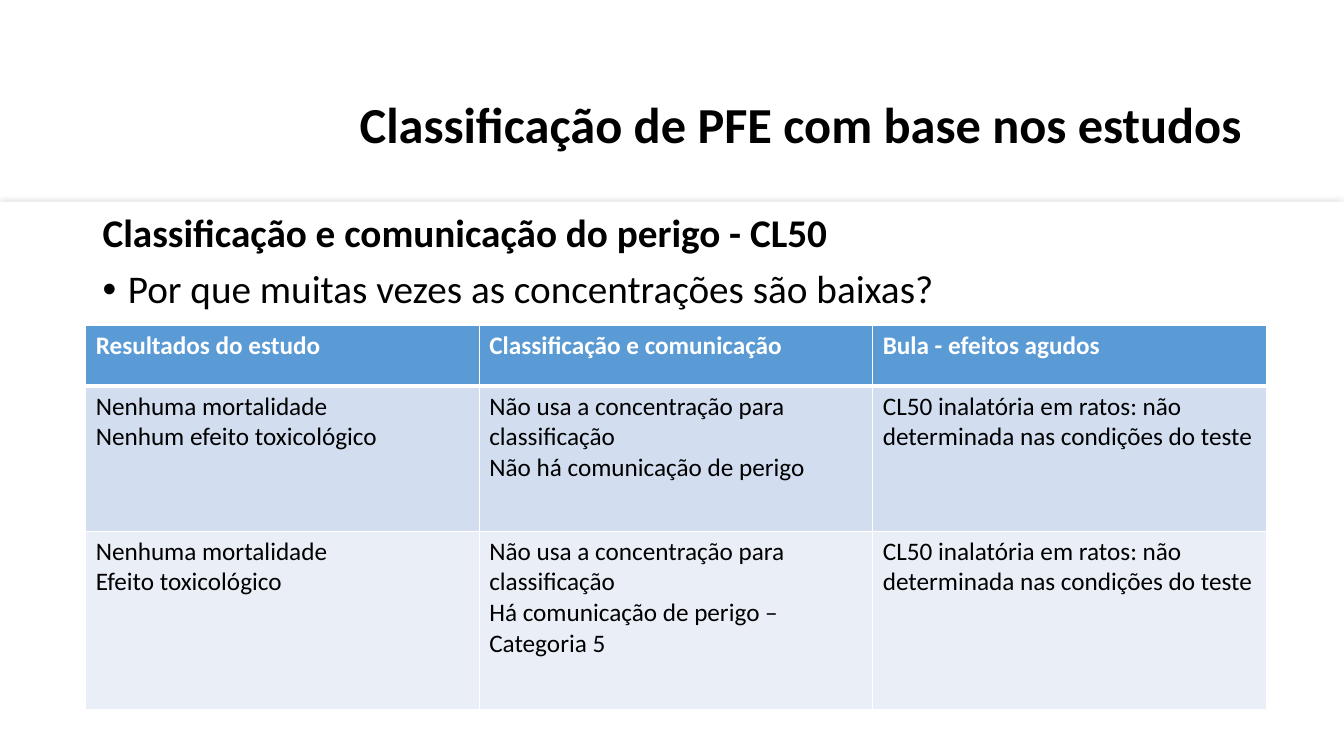
from lxml.etree import SubElement
from pptx import Presentation
from pptx.dml.color import RGBColor
from pptx.enum.shapes import MSO_SHAPE as Preset
from pptx.enum.text import MSO_ANCHOR as Anchor, PP_ALIGN as Align
from pptx.oxml import parse_xml
from pptx.oxml.ns import nsdecls, qn
from pptx.util import Emu, Pt

BLACK = RGBColor(0x00, 0x00, 0x00)
WHITE = RGBColor(0xFF, 0xFF, 0xFF)
SHADOW_GRAY = RGBColor(0xA6, 0xA6, 0xA6)
HEADER_BLUE = RGBColor(0x5B, 0x9B, 0xD5)
BAND_FILLS = [RGBColor(0xD2, 0xDE, 0xEF), RGBColor(0xEA, 0xEF, 0xF7)]

NOT_DETERMINED = "CL50 inalatória em ratos: não determinada nas condições do teste"
NOT_USED = "Não usa a concentração para classificação"
ROWS = [
    ["Resultados do estudo", "Classificação e comunicação", "Bula - efeitos agudos"],
    ["Nenhuma mortalidade\nNenhum efeito toxicológico",
     f"{NOT_USED}\nNão há comunicação de perigo", NOT_DETERMINED],
    ["Nenhuma mortalidade\nEfeito toxicológico",
     f"{NOT_USED}\nHá comunicação de perigo – Categoria 5", NOT_DETERMINED],
]


def px(length):
    return Emu(length * 9144)


def write(paragraph, text, size=18, color=BLACK, bold=False, align=None,
          line_spacing=None, space_before=None, bullet=None, indent=0):
    if bullet:
        properties = paragraph._p.get_or_add_pPr()
        properties.set("marL", str(px(indent)))
        properties.set("indent", str(-px(indent)))
        SubElement(properties, qn("a:buFont")).set("typeface", "Arial")
        SubElement(properties, qn("a:buChar")).set("char", bullet)
    paragraph.alignment = align
    paragraph.line_spacing = line_spacing
    paragraph.space_before = space_before
    run = paragraph.add_run()
    run.text = text
    run.font.name = "Calibri"
    run.font.size = Pt(size)
    run.font.bold = bold
    run.font.color.rgb = color


class SlideBuilder:
    def __init__(self, slide):
        self.slide = slide

    def panel(self, left, top, width, height):
        shape = self.slide.shapes.add_shape(
            Preset.RECTANGLE, px(left), px(top), px(width), px(height))
        shape.fill.solid()
        shape.fill.fore_color.rgb = WHITE
        shape.line.fill.background()
        shape.shadow.inherit = False
        effects = shape._element.spPr.find(qn("a:effectLst"))
        effects.append(parse_xml(
            f'<a:outerShdw {nsdecls("a")} blurRad="{Pt(5)}" dist="0" dir="0">'
            f'<a:srgbClr val="{SHADOW_GRAY}"><a:alpha val="42000"/></a:srgbClr>'
            '</a:outerShdw>'))

    def text_box(self, left, top, width, height, anchor=Anchor.TOP):
        frame = self.slide.shapes.add_textbox(
            px(left), px(top), px(width), px(height)).text_frame
        frame.word_wrap = True
        frame.vertical_anchor = anchor
        return frame

    def border(self, cell, widths):
        properties = cell._tc.get_or_add_tcPr()
        for position, (side, width) in enumerate(widths.items()):
            properties.insert(position, parse_xml(
                f'<a:ln{side} {nsdecls("a")} w="{Pt(width)}"><a:solidFill>'
                f'<a:srgbClr val="{WHITE}"/></a:solidFill></a:ln{side}>'))

    def table(self, left, top, width, heights, rows):
        table = self.slide.shapes.add_table(
            len(rows), len(rows[0]), px(left), px(top), px(width), px(sum(heights))).table
        for row_index, texts in enumerate(rows):
            header = row_index == 0
            table.rows[row_index].height = px(heights[row_index])
            for column_index, text in enumerate(texts):
                cell = table.cell(row_index, column_index)
                cell.fill.solid()
                cell.fill.fore_color.rgb = HEADER_BLUE if header else BAND_FILLS[row_index - 1]
                self.border(cell, {"L": 1, "R": 1, "T": 3 if row_index == 1 else 1,
                                   "B": 3 if header else 1})
                frame = cell.text_frame
                for line_index, line in enumerate(text.split("\n")):
                    paragraph = frame.add_paragraph() if line_index else frame.paragraphs[0]
                    write(paragraph, line, color=WHITE if header else BLACK, bold=header)


def main():
    presentation = Presentation()
    presentation.slide_width = px(1333)
    presentation.slide_height = px(750)
    builder = SlideBuilder(presentation.slides.add_slide(presentation.slide_layouts[6]))

    builder.panel(0, 200, 1333, 550)
    title = builder.text_box(188, 64, 1054, 125, Anchor.MIDDLE)
    write(title.paragraphs[0], "Classificação de PFE com base nos estudos",
          size=36, bold=True, align=Align.RIGHT, line_spacing=0.9)
    body = builder.text_box(92, 207, 1150, 116)
    write(body.paragraphs[0], "Classificação e comunicação do perigo - CL50",
          size=28, bold=True, line_spacing=0.9)
    write(body.add_paragraph(), "Por que muitas vezes as concentrações são baixas?",
          size=28, line_spacing=0.9, space_before=Pt(10), bullet="•", indent=25)
    builder.table(85, 323, 1171, [60, 144, 177], ROWS)

    presentation.save("out.pptx")


if __name__ == "__main__":
    main()
